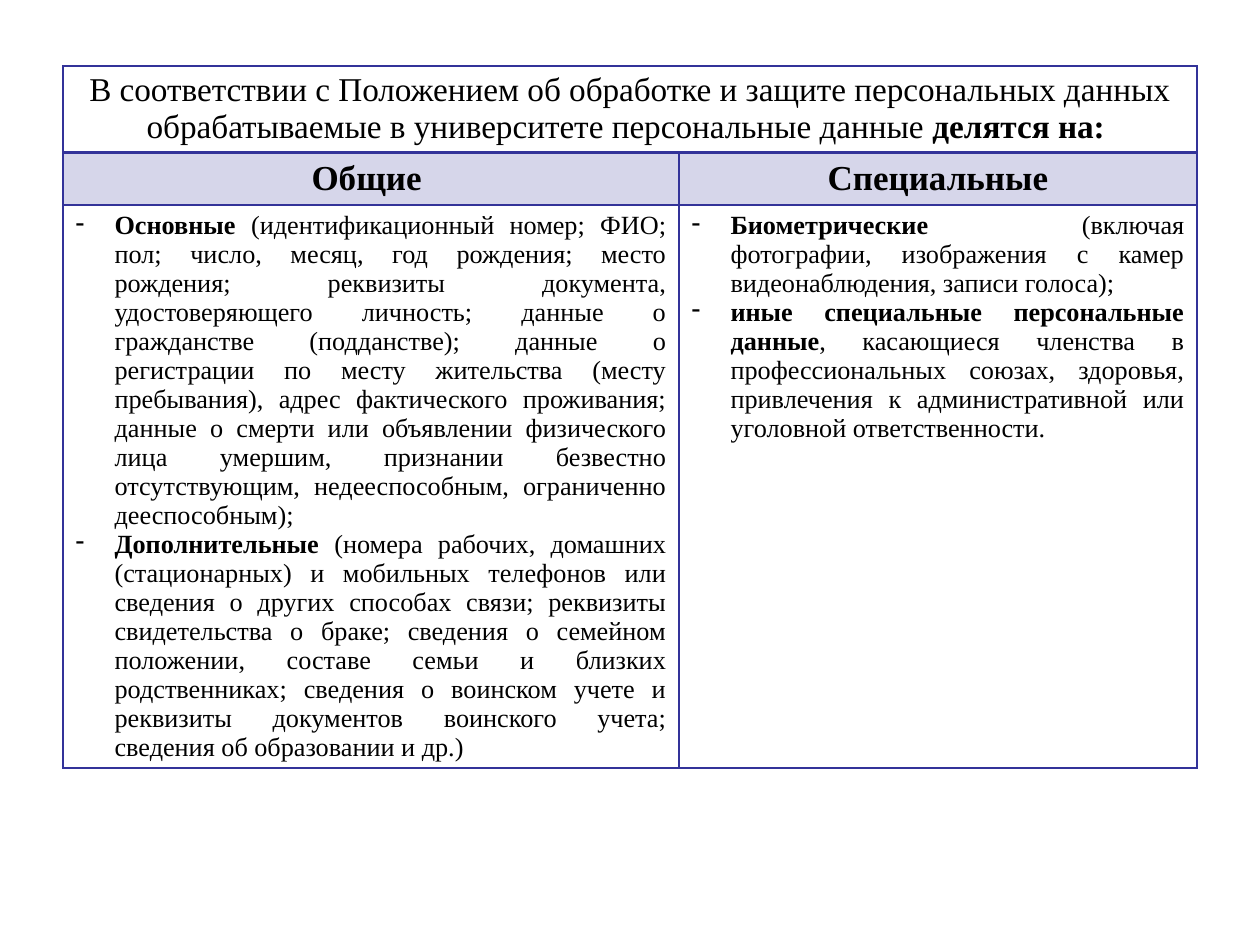
from lxml import etree
from pptx import Presentation
from pptx.dml.color import RGBColor
from pptx.enum.text import PP_ALIGN
from pptx.oxml.ns import qn
from pptx.util import Pt

PX = 914400 // 126
CENTER, JUSTIFY = PP_ALIGN.CENTER, PP_ALIGN.JUSTIFY
COLORS = {"text": "000000", "accent": "333399"}
FONT = "Times New Roman"
HEADER_OPACITY = 20
INDENT = 39
COLUMN_WIDTHS = [616, 518]
ROW_HEIGHTS = [87, 52, 562]

# Each paragraph is a list of (text, bold) pieces; "\n" is a line break.
heading = [[
    ("В соответствии с Положением об обработке и защите персональных данных\n"
     "обрабатываемые в университете персональные данные ", False),
    ("делятся на: ", True),
]]
general = [
    [("Основные ", True),
     ("(идентификационный номер; ФИО; пол; число, месяц, год рождения; место рождения; "
      "реквизиты документа, удостоверяющего личность; данные о гражданстве (подданстве); "
      "данные о регистрации по месту жительства (месту пребывания), адрес фактического "
      "проживания; данные о смерти или объявлении физического лица умершим, признании "
      "безвестно отсутствующим, недееспособным, ограниченно дееспособным);", False)],
    [("Дополнительные", True),
     (" (номера рабочих, домашних (стационарных) и мобильных телефонов или сведения о "
      "других способах связи; реквизиты свидетельства о браке; сведения о семейном "
      "положении, составе семьи и близких родственниках; сведения о воинском учете и "
      "реквизиты документов воинского учета; сведения об образовании и др.)", False)],
]
special = [
    [("Биометрические", True),
     (" (включая фотографии, изображения с камер видеонаблюдения, записи голоса);", False)],
    [("иные специальные персональные данные", True),
     (", касающиеся членства в профессиональных союзах, здоровья, привлечения к "
      "административной или уголовной ответственности.", False)],
]
rows = [
    {"cells": [heading], "size": 19, "align": CENTER},
    {"cells": [[[("Общие ", True)]], [[("Специальные", True)]]], "size": 20, "align": CENTER},
    {"cells": [general, special], "size": 15, "align": JUSTIFY},
]


def set_borders(cell, widths):
    """Draw the four cell edges; widths maps the side letter to points."""
    properties = cell._tc.get_or_add_tcPr()
    for side, width in widths.items():
        edge = etree.SubElement(properties, qn(f"a:ln{side}"), w=str(Pt(width)))
        fill = etree.SubElement(edge, qn("a:solidFill"))
        etree.SubElement(fill, qn("a:srgbClr"), val=COLORS["accent"])


def write_paragraph(paragraph, pieces, size, align):
    paragraph.alignment = align
    if align == JUSTIFY:
        properties = paragraph._p.get_or_add_pPr()
        properties.set("marL", str(INDENT * PX))
        properties.set("indent", str(-INDENT * PX))
        etree.SubElement(properties, qn("a:buChar"), char="-")
    for text, bold in pieces:
        for number, line in enumerate(text.split("\n")):
            if number:
                paragraph.add_line_break()
            run = paragraph.add_run()
            run.text = line
            for name, value in {"name": FONT, "size": Pt(size), "bold": bold}.items():
                setattr(run.font, name, value)
            run.font.color.rgb = RGBColor.from_string(COLORS["text"])


prs = Presentation()
prs.slide_width, prs.slide_height = 1260 * PX, 945 * PX
slide = prs.slides.add_slide(prs.slide_layouts[6])

table = slide.shapes.add_table(
    len(ROW_HEIGHTS), len(COLUMN_WIDTHS), 63 * PX, 66 * PX,
    sum(COLUMN_WIDTHS) * PX, sum(ROW_HEIGHTS) * PX).table
table.first_row = table.horz_banding = False
for column, width in zip(table.columns, COLUMN_WIDTHS):
    column.width = width * PX
for row, height in zip(table.rows, ROW_HEIGHTS):
    row.height = height * PX
table.cell(0, 0).merge(table.cell(0, 1))

for row_number, row in enumerate(rows):
    for column_number in range(len(COLUMN_WIDTHS)):
        cell = table.cell(row_number, column_number)
        set_borders(cell, {"L": 1, "R": 1,
                           "T": 2 if row_number == 1 else 1,
                           "B": 2 if row_number == 0 else 1})
        if row_number == 1:
            cell.fill.solid()
            cell.fill.fore_color.rgb = RGBColor.from_string(COLORS["accent"])
            tint = cell._tc.tcPr.find(qn("a:solidFill")).find(qn("a:srgbClr"))
            etree.SubElement(tint, qn("a:alpha"), val=str(HEADER_OPACITY * 1000))
        else:
            cell.fill.background()
        if cell.is_spanned:
            continue
        frame = cell.text_frame
        for number, pieces in enumerate(row["cells"][column_number]):
            paragraph = frame.add_paragraph() if number else frame.paragraphs[0]
            write_paragraph(paragraph, pieces, row["size"], row["align"])

prs.save("out.pptx")
